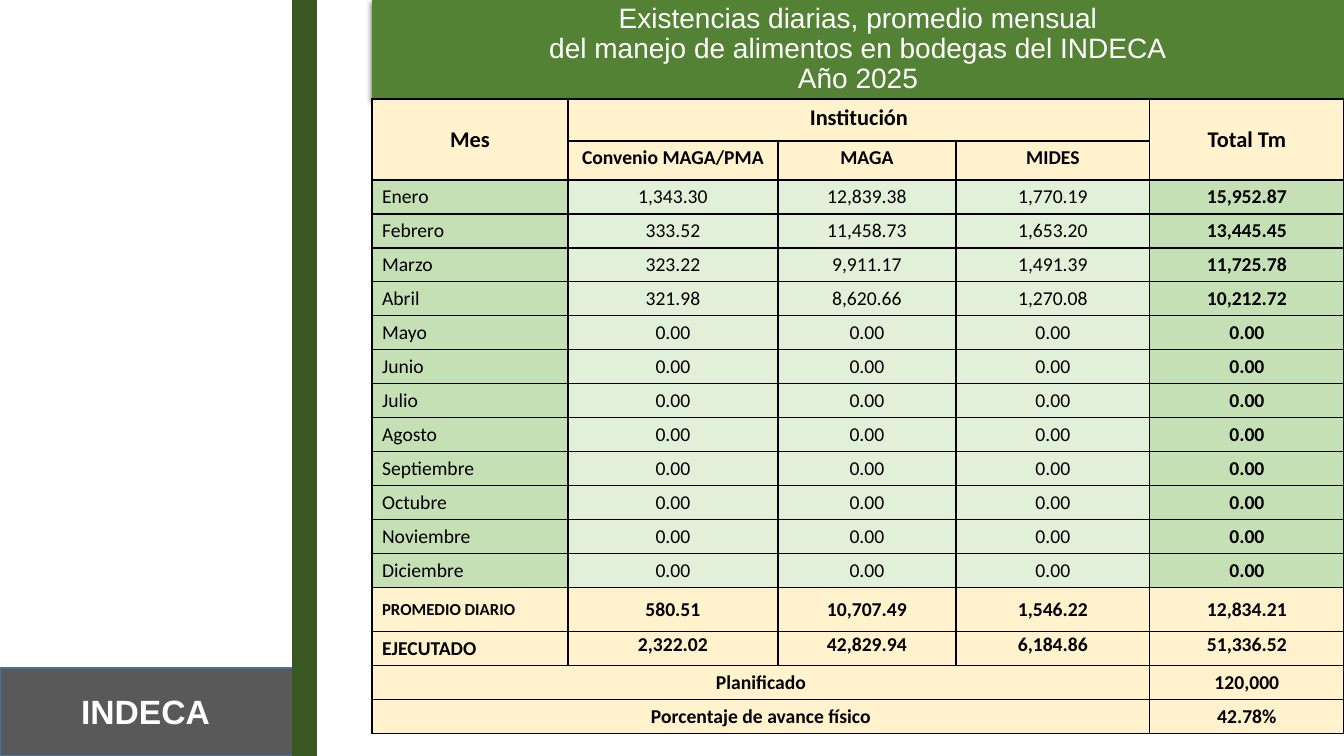
from lxml.etree import SubElement
from pptx import Presentation
from pptx.dml.color import RGBColor
from pptx.enum.shapes import MSO_SHAPE
from pptx.enum.text import MSO_ANCHOR, PP_ALIGN
from pptx.oxml.ns import qn
from pptx.util import Emu, Pt

EMU_PER_PX = 914400 / 100.8
CREAM, GREEN, PALE_GREEN = "FFF2CC", "C5E0B4", "E2F0D9"
BLACK, WHITE = "000000", "FFFFFF"

COLUMN_WIDTHS = [196, 210, 178, 194, 194]
ROW_HEIGHTS = [42, 39] + [34] * 12 + [44] + [34] * 3
FIRST_MONTH, AVERAGE, EXECUTED = 2, 14, 15
MERGES = [(0, 0, 1, 0), (0, 1, 0, 3), (0, 4, 1, 4), (16, 0, 16, 3), (17, 0, 17, 3)]

ZEROS = ["0.00"] * 4
IDLE_MONTHS = ["Mayo", "Junio", "Julio", "Agosto", "Septiembre", "Octubre",
               "Noviembre", "Diciembre"]
STOCK = [
    ["Mes", "Institución", "", "", "Total Tm"],
    ["", "Convenio MAGA/PMA", "MAGA", "MIDES", ""],
    ["Enero", "1,343.30", "12,839.38", "1,770.19", "15,952.87"],
    ["Febrero", "333.52", "11,458.73", "1,653.20", "13,445.45"],
    ["Marzo", "323.22", "9,911.17", "1,491.39", "11,725.78"],
    ["Abril", "321.98", "8,620.66", "1,270.08", "10,212.72"],
    *[[month] + ZEROS for month in IDLE_MONTHS],
    ["PROMEDIO DIARIO", "580.51", "10,707.49", "1,546.22", "12,834.21"],
    ["EJECUTADO", "2,322.02", "42,829.94", "6,184.86", "51,336.52"],
    ["Planificado", "", "", "", "120,000"],
    ["Porcentaje de avance físico", "", "", "", "42.78%"],
]


def px(length):
    return Emu(round(length * EMU_PER_PX))


def color(value):
    return RGBColor.from_string(value)


def write(frame, text, size, font, fill, bold=False, align=PP_ALIGN.CENTER):
    frame.text = text
    para = frame.paragraphs[0]
    para.alignment = align
    for span in para.runs:
        span.font.size = Pt(size)
        span.font.name = font
        span.font.bold = bold
        span.font.color.rgb = color(fill)
    return para


def add_rectangle(page, left, top, width, height, fill, line=None):
    box = page.shapes.add_shape(MSO_SHAPE.RECTANGLE, px(left), px(top), px(width), px(height))
    box.shadow.inherit = False
    box.fill.solid()
    box.fill.fore_color.rgb = color(fill)
    if line:
        box.line.color.rgb = color(line)
        box.line.width = Pt(1)
    else:
        box.line.fill.background()
    return box


def add_drop_shadow(box):
    effects = box._element.spPr.find(qn("a:effectLst"))
    shadow = SubElement(effects, qn("a:outerShdw"), blurRad=str(Pt(4.5)), dist=str(Pt(1.5)),
                        dir="5400000", algn="ctr", rotWithShape="0")
    tone = SubElement(shadow, qn("a:srgbClr"), val=BLACK)
    SubElement(tone, qn("a:alpha"), val="63000")


def add_title(page):
    box = add_rectangle(page, 372, 0, 972, 99, "548235")
    add_drop_shadow(box)
    box.text_frame.vertical_anchor = MSO_ANCHOR.MIDDLE
    para = write(box.text_frame,
                 "Existencias diarias, promedio mensual\v"
                 "del manejo de alimentos en bodegas del INDECA\vAño 2025",
                 20, "Arial", WHITE)
    para.line_spacing = 0.9


def add_side_band(page):
    add_rectangle(page, 0, 668, 293, 88, "595959", "43739E")
    add_rectangle(page, 293, 0, 23, 756, "385723", "385723")
    label = page.shapes.add_textbox(px(10), px(686), px(271), px(50))
    label.text_frame.word_wrap = True
    write(label.text_frame, "INDECA", 24, "Arial", WHITE, bold=True)


def add_borders(cell):
    properties = cell._tc.get_or_add_tcPr()
    for side in ("a:lnL", "a:lnR", "a:lnT", "a:lnB"):
        line = SubElement(properties, qn(side), w=str(Pt(1)))
        SubElement(SubElement(line, qn("a:solidFill")), qn("a:srgbClr"), val=BLACK)


def style_cell(cell, row, column, text):
    """Format one table cell according to the row group and column it is in."""
    is_month = FIRST_MONTH <= row < AVERAGE
    is_value = 1 <= column <= 3
    is_main_header = row == 0
    is_row_label = column == 0 and FIRST_MONTH <= row <= EXECUTED

    size = 16 if is_main_header else 14
    if row == AVERAGE and column == 0:
        size = 12
    add_borders(cell)
    cell.fill.solid()
    cell.fill.fore_color.rgb = color((PALE_GREEN if is_value else GREEN) if is_month else CREAM)
    if row == AVERAGE or (is_main_header and not is_value):
        cell.vertical_anchor = MSO_ANCHOR.MIDDLE
    if row == EXECUTED and column > 0:
        cell.margin_left = cell.margin_right = cell.margin_top = px(1)
        cell.margin_bottom = 0
    if text:
        write(cell.text_frame, text, size, "Calibri", BLACK,
              bold=not is_month or column == 4,
              align=PP_ALIGN.LEFT if is_row_label else PP_ALIGN.CENTER)


def add_stock_table(page):
    frame = page.shapes.add_table(len(STOCK), len(COLUMN_WIDTHS), px(372), px(99),
                                  px(sum(COLUMN_WIDTHS)), px(sum(ROW_HEIGHTS)))
    table = frame.table
    table.first_row = table.horz_banding = False
    for column, width in zip(table.columns, COLUMN_WIDTHS):
        column.width = px(width)
    for row, height in zip(table.rows, ROW_HEIGHTS):
        row.height = px(height)
    for row, texts in enumerate(STOCK):
        for column, text in enumerate(texts):
            style_cell(table.cell(row, column), row, column, text)
    for top, left, bottom, right in MERGES:
        table.cell(top, left).merge(table.cell(bottom, right))


def main():
    deck = Presentation()
    deck.slide_width, deck.slide_height = px(1344), px(756)
    page = deck.slides.add_slide(deck.slide_layouts[6])
    add_side_band(page)
    add_title(page)
    add_stock_table(page)
    deck.save("out.pptx")


if __name__ == "__main__":
    main()
